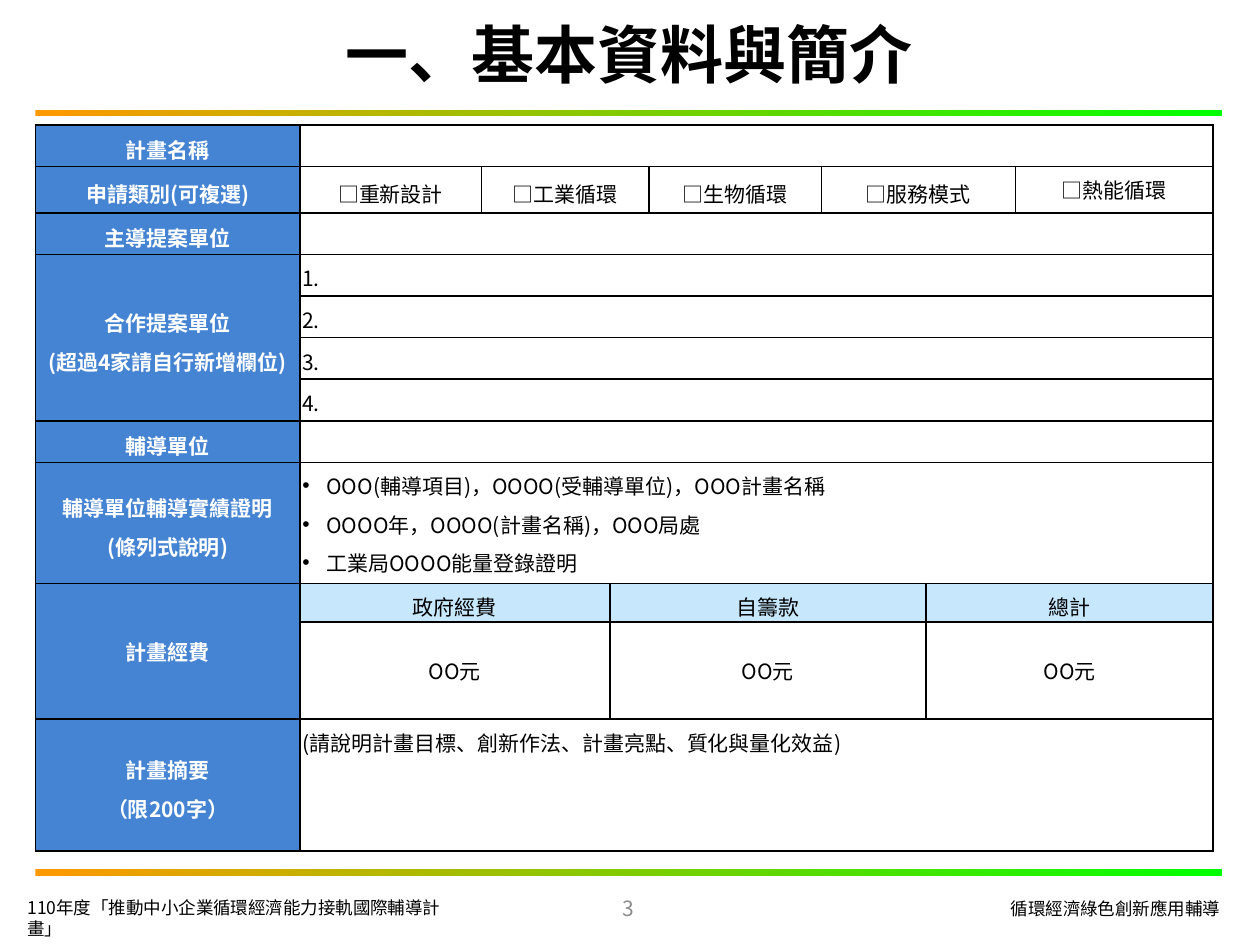
"""Build the project data and summary form slide."""
from lxml.etree import SubElement
from pptx import Presentation
from pptx.dml.color import RGBColor
from pptx.enum.shapes import MSO_SHAPE
from pptx.enum.text import MSO_ANCHOR, PP_ALIGN
from pptx.oxml.ns import qn
from pptx.util import Inches, Pt

FONT = "Noto Sans CJK SC"
BLACK = RGBColor(0, 0, 0)
WHITE = RGBColor(255, 255, 255)
GRAY = RGBColor(0x8C, 0x8C, 0x8C)
BLUE = RGBColor(0x45, 0x84, 0xD3)
PALE = RGBColor(0xC6, 0xE7, 0xFC)
ORANGE = RGBColor(0xFF, 0x99, 0)
GREEN = RGBColor(0, 0xFF, 0)

COLS = [2.1, 1.44, 1.02, 0.31, 1.37, 0.83, 0.71, 1.57]
ROWS = [0.33, 0.37] + [0.33] * 6 + [0.96, 0.3, 0.77, 1.05]
HEADS = [
    (0, 1, "計畫名稱"),
    (1, 1, "申請類別(可複選)"),
    (2, 1, "主導提案單位"),
    (3, 4, "合作提案單位\n(超過4家請自行新增欄位)"),
    (7, 1, "輔導單位"),
    (8, 1, "輔導單位輔導實績證明\n(條列式說明)"),
    (9, 2, "計畫經費"),
    (11, 1, "計畫摘要\n（限200字）"),
]
WIDE = {
    0: "", 2: "", 3: "1.", 4: "2.", 5: "3.", 6: "4.", 7: "",
    11: "(請說明計畫目標、創新作法、計畫亮點、質化與量化效益)",
}
PROOF = ("OOO(輔導項目)，OOOO(受輔導單位)，OOO計畫名稱\n"
         "OOOO年，OOOO(計畫名稱)，OOO局處\n"
         "工業局OOOO能量登錄證明")
TYPES = [(1, 1, "重新設計"), (2, 2, "工業循環"), (4, 1, "生物循環"),
         (5, 2, "服務模式"), (7, 1, "熱能循環")]
FUNDS = [(1, 2, "政府經費"), (3, 3, "自籌款"), (6, 2, "總計")]


def style(para, size, color=BLACK, bold=False, align=PP_ALIGN.LEFT):
    """Set the alignment and font of a paragraph."""
    para.alignment = align
    font = para.font
    font.size, font.bold, font.name = Pt(size), bold, FONT
    font.color.rgb = color
    props = para._p.pPr.find(qn("a:defRPr"))
    SubElement(props, qn("a:ea"), typeface=FONT)


def bullet(para):
    """Give a paragraph a hanging round bullet."""
    props = para._p.get_or_add_pPr()
    props.set("marL", str(Inches(0.19)))
    props.set("indent", str(Inches(-0.19)))
    SubElement(props, qn("a:buFont"), typeface="Arial")
    SubElement(props, qn("a:buChar"), char="•")


def label(slide, box, text, size, **look):
    """Add a wrapped text box."""
    frame = slide.shapes.add_textbox(*map(Inches, box)).text_frame
    frame.word_wrap = True
    frame.text = text
    style(frame.paragraphs[0], size, **look)
    return frame


def rule(slide, top):
    """Add a gradient bar across the slide."""
    bar = slide.shapes.add_shape(
        MSO_SHAPE.RECTANGLE, Inches(0.28), Inches(top), Inches(9.42), Inches(0.05))
    bar.shadow.inherit = False
    bar.line.fill.background()
    bar.fill.gradient()
    bar.fill.gradient_angle = 0
    for stop, color in zip(bar.fill.gradient_stops, (ORANGE, GREEN)):
        stop.color.rgb = color


def border(cell):
    """Draw thin black lines on all sides of a cell."""
    props = cell._tc.get_or_add_tcPr()
    for side in ("a:lnL", "a:lnR", "a:lnT", "a:lnB"):
        line = SubElement(props, qn(side), w=str(Pt(1)))
        fill = SubElement(line, qn("a:solidFill"))
        SubElement(fill, qn("a:srgbClr"), val=str(BLACK))


def write(grid, row, col, text, high=1, wide=1, fill=None, gap=22,
          mid=True, dots=False, **look):
    """Merge, fill and write one block of the table."""
    cell = grid.cell(row, col)
    if high * wide > 1:
        cell.merge(grid.cell(row + high - 1, col + wide - 1))
    if fill:
        cell.fill.solid()
        cell.fill.fore_color.rgb = fill
    cell.vertical_anchor = MSO_ANCHOR.MIDDLE if mid else MSO_ANCHOR.TOP
    cell.text = text
    for para in cell.text_frame.paragraphs:
        if dots:
            bullet(para)
        if gap:
            para.line_spacing = Pt(gap)
        style(para, 12, align=PP_ALIGN.CENTER if mid else PP_ALIGN.LEFT, **look)


def form(slide):
    """Add the form table."""
    grid = slide.shapes.add_table(
        len(ROWS), len(COLS), Inches(0.28), Inches(0.99),
        Inches(sum(COLS)), Inches(sum(ROWS))).table
    grid.first_row = grid.horz_banding = False
    for col, width in zip(grid.columns, COLS):
        col.width = Inches(width)
    for row, height in zip(grid.rows, ROWS):
        row.height = Inches(height)
    for cell in grid.iter_cells():
        cell.margin_left = cell.margin_right = Inches(0.02)
        cell.margin_top = cell.margin_bottom = 0
        border(cell)
        cell.fill.background()
    for row, high, text in HEADS:
        write(grid, row, 0, text, high=high, fill=BLUE,
              gap=18 if row == 9 else 22, color=WHITE, bold=True)
    for row, text in WIDE.items():
        write(grid, row, 1, text, wide=7, mid=False)
    write(grid, 8, 1, PROOF, wide=7, mid=False, dots=True)
    for col, wide, text in TYPES:
        write(grid, 1, col, "□" + text, wide=wide, gap=None if col == 7 else 22)
    for col, wide, text in FUNDS:
        write(grid, 9, col, text, wide=wide, fill=PALE)
        write(grid, 10, col, "OO元", wide=wide, gap=18)


def main():
    """Build and save the slide."""
    deck = Presentation()
    deck.slide_width, deck.slide_height = Inches(10), Inches(7.5)
    slide = deck.slides.add_slide(deck.slide_layouts[6])
    for top in (0.87, 6.9):
        rule(slide, top)
    label(slide, (0.12, 7.07, 3.71, 0.27),
          "110年度「推動中小企業循環經濟能力接軌國際輔導計畫」", 10)
    label(slide, (7.36, 7.08, 2.42, 0.27), "循環經濟綠色創新應用輔導", 10,
          align=PP_ALIGN.RIGHT)
    title = label(slide, (0, 0.13, 9.98, 0.59), "一、基本資料與簡介", 36,
                  bold=True, align=PP_ALIGN.CENTER)
    page = label(slide, (3.82, 7.01, 2.33, 0.4), "3", 12,
                 color=GRAY, align=PP_ALIGN.CENTER)
    title.vertical_anchor = page.vertical_anchor = MSO_ANCHOR.MIDDLE
    form(slide)
    deck.save("out.pptx")


if __name__ == "__main__":
    main()
